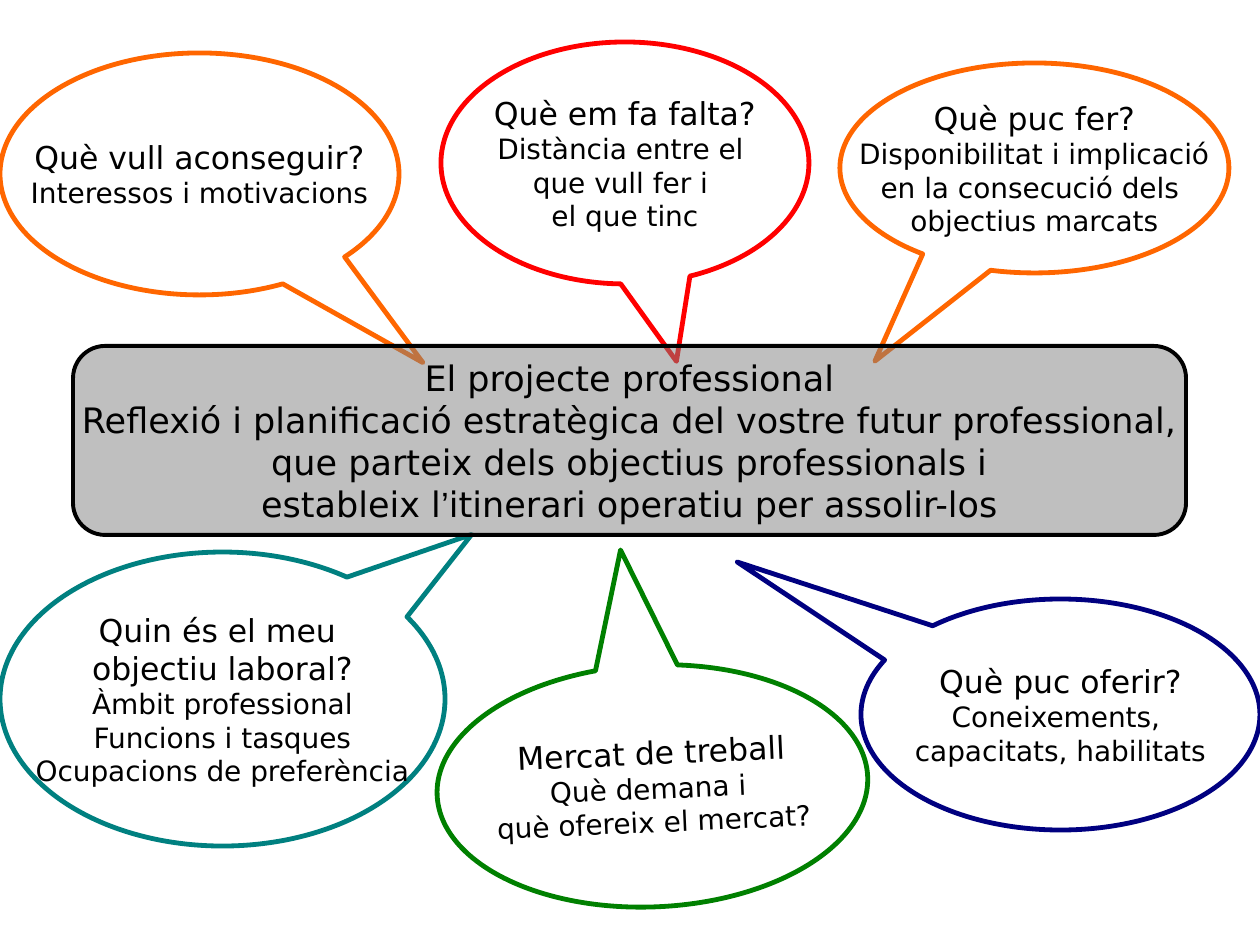
from itertools import groupby

from lxml.etree import SubElement
from pptx import Presentation
from pptx.dml.color import RGBColor
from pptx.enum.shapes import MSO_SHAPE
from pptx.enum.text import MSO_ANCHOR, PP_ALIGN
from pptx.oxml.ns import qn
from pptx.util import Pt

EMU_PER_PX = 914400 / 126


def px(length):
    return round(length * EMU_PER_PX)


def color(hex_value):
    return RGBColor.from_string(hex_value)


def write_line(paragraph, text, size, font="DejaVu Sans", quote_font="Arial", ink="000000"):
    paragraph.alignment = PP_ALIGN.CENTER
    for is_quote, letters in groupby(text, key=lambda letter: letter == "’"):
        run = paragraph.add_run()
        run.text = "".join(letters)
        run.font.name = quote_font if is_quote else font
        run.font.size = Pt(size)
        run.font.color.rgb = color(ink)


class ProjectMap:
    heading_size = 18
    detail_size = 16
    center_size = 20
    callout_border = 2.75
    center_border = 2.25

    def __init__(self, slide):
        self.slide = slide

    def bubble(self, preset, box, adjustments, border, border_width, lines):
        bubble = self.slide.shapes.add_shape(preset, *map(px, box))
        bubble.shadow.inherit = False
        for index, value in enumerate(adjustments):
            bubble.adjustments[index] = value
        bubble.fill.background()
        bubble.line.color.rgb = color(border)
        bubble.line.width = Pt(border_width)
        frame = bubble.text_frame
        frame.word_wrap = False
        frame.vertical_anchor = MSO_ANCHOR.MIDDLE
        for index, (text, size) in enumerate(lines):
            paragraph = frame.add_paragraph() if index else frame.paragraphs[0]
            write_line(paragraph, text, size)
        return bubble

    def callout(self, box, tip, border, headings, details, rotation=0):
        lines = [(text, self.heading_size) for text in headings]
        lines += [(text, self.detail_size) for text in details]
        callout = self.bubble(
            MSO_SHAPE.OVAL_CALLOUT, box, tip, border, self.callout_border, lines
        )
        callout.rotation = rotation

    def center(self, box, fill, opacity, border, texts):
        lines = [(text, self.center_size) for text in texts]
        center = self.bubble(
            MSO_SHAPE.ROUNDED_RECTANGLE, box, [0.17], border, self.center_border, lines
        )
        center.fill.solid()
        center.fill.fore_color.rgb = color(fill)
        fill_color = center.fill._xPr.find(qn("a:solidFill"))[0]
        SubElement(fill_color, qn("a:alpha"), val=str(opacity * 1000))


def main():
    presentation = Presentation()
    presentation.slide_width = px(1260)
    presentation.slide_height = px(945)
    blank_layout = presentation.slide_layouts[6]
    project = ProjectMap(presentation.slides.add_slide(blank_layout))

    project.callout(
        (0, 53, 399, 242), (0.56, 0.78), "FF6600",
        ["Què vull aconseguir?"],
        ["Interessos i motivacions"],
    )
    project.callout(
        (437, 665, 431, 242), (-0.05, -0.98), "008000",
        ["Mercat de treball"],
        ["Què demana i ", "què ofereix el mercat?"],
        rotation=357.5,
    )
    project.callout(
        (861, 599, 399, 231), (-0.81, -0.66), "000080",
        ["Què puc oferir?"],
        ["Coneixements, ", "capacitats, habilitats"],
    )
    project.callout(
        (441, 42, 368, 242), (0.14, 0.82), "FF0000",
        ["Què em fa falta?"],
        ["Distància entre el ", "que vull fer i ", "el que tinc"],
    )
    project.callout(
        (0, 552, 445, 294), (0.56, -0.56), "008080",
        ["Quin és el meu ", "objectiu laboral?"],
        ["Àmbit professional", "Funcions i tasques", "Ocupacions de preferència"],
    )
    project.callout(
        (840, 63, 389, 210), (-0.41, 0.92), "FF6600",
        ["Què puc fer?"],
        ["Disponibilitat i implicació", "en la consecució dels ", "objectius marcats"],
    )
    project.center(
        (73, 346, 1113, 189), "808080", 50, "000000",
        [
            "El projecte professional",
            "Reflexió i planificació estratègica del vostre futur professional,",
            " que parteix dels objectius professionals i ",
            "estableix l’itinerari operatiu per assolir-los",
        ],
    )
    presentation.save("out.pptx")


if __name__ == "__main__":
    main()
